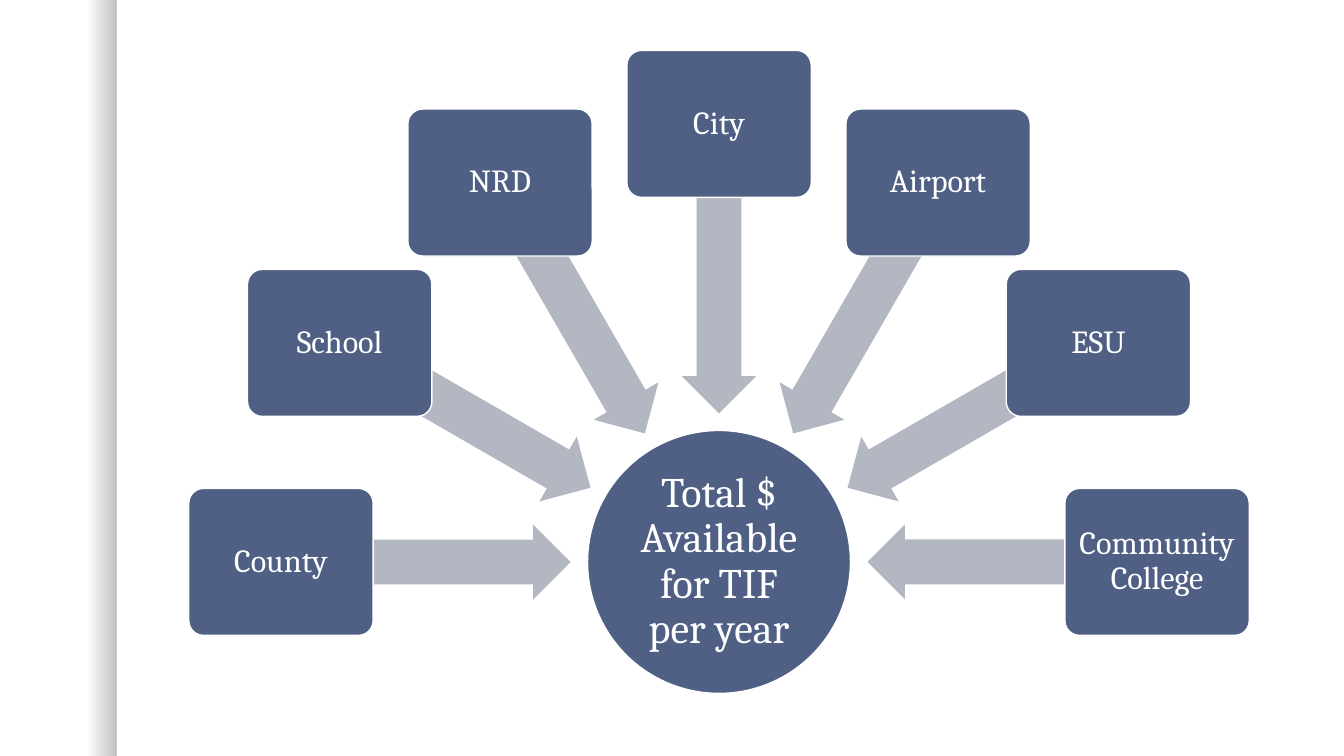
from math import cos, radians, sin

from pptx import Presentation
from pptx.dml.color import RGBColor
from pptx.enum.shapes import MSO_SHAPE as Preset
from pptx.enum.text import MSO_ANCHOR as Anchor, PP_ALIGN as Align
from pptx.oxml.ns import qn
from pptx.util import Inches, Pt
from lxml.etree import SubElement

COLORS = {"node": "506084", "arrow": "B3B7C2", "white": "FFFFFF", "shade": "000000"}
FONT = "Cambria"
COLUMNS, ROWS = 32, 18
HUB = (17.12, 13.38)
BOX_RADIUS, ARROW_RADIUS = 10.43, 6.98
BOX_SIZE, ARROW_SIZE, HUB_SIZE = (4.39, 3.5), (6.89, 1.78), (6.26, 6.26)
SOURCES = ["County", "School", "NRD", "City", "Airport", "ESU", "Community College"]


class Diagram:
    """Draws on one slide; centres and sizes are in grid columns and rows."""

    def __init__(self, presentation):
        self.slide = presentation.slides.add_slide(presentation.slide_layouts[6])
        self.column = presentation.slide_width / COLUMNS
        self.row = presentation.slide_height / ROWS

    def shape(self, preset, centre, size, color=None):
        (x, y), (width, height) = centre, size
        shape = self.slide.shapes.add_shape(
            preset, round((x - width / 2) * self.column), round((y - height / 2) * self.row),
            round(width * self.column), round(height * self.row))
        shape.shadow.inherit = False
        shape.line.fill.background()
        if color:
            shape.fill.solid()
            shape.fill.fore_color.rgb = RGBColor.from_string(COLORS[color])
        return shape

    def edge_shade(self, width):
        """Left band that darkens towards its right edge."""
        shape = self.shape(Preset.RECTANGLE, (width / 2, ROWS / 2), (width, ROWS))
        shape.fill.gradient()
        shape.fill.gradient_angle = 0
        for stop, position, opacity in zip(shape.fill.gradient_stops, (0.75, 1), (0, 25)):
            stop.position = position
            stop.color.rgb = RGBColor.from_string(COLORS["shade"])
        colors = shape._element.spPr.iter(qn("a:srgbClr"))
        for color, opacity in zip(list(colors), (0, 25)):
            SubElement(color, qn("a:alpha")).set("val", str(opacity * 1000))

    def node(self, preset, centre, size, text, points, margin):
        shape = self.shape(preset, centre, size, "node")
        shape.line.color.rgb = RGBColor.from_string(COLORS["white"])
        shape.line.width = Pt(1)
        frame = shape.text_frame
        frame.word_wrap = True
        frame.vertical_anchor = Anchor.MIDDLE
        frame.margin_left = frame.margin_right = Inches(margin)
        frame.margin_top = frame.margin_bottom = Inches(margin)
        paragraph = frame.paragraphs[0]
        paragraph.text = text
        paragraph.alignment = Align.CENTER
        paragraph.line_spacing = 0.9
        paragraph.font.name = FONT
        paragraph.font.size = Pt(points)
        paragraph.font.color.rgb = RGBColor.from_string(COLORS["white"])
        return shape

    def arrow(self, angle):
        shape = self.shape(Preset.LEFT_ARROW, around_hub(angle, ARROW_RADIUS),
                           ARROW_SIZE, "arrow")
        shape.adjustments[0], shape.adjustments[1] = 0.6, 0.5
        shape.rotation = angle % 360

    def source(self, angle, text):
        box = self.node(Preset.ROUNDED_RECTANGLE, around_hub(angle, BOX_RADIUS),
                        BOX_SIZE, text, 23, 0.05)
        box.adjustments[0] = 0.1


def around_hub(angle, radius):
    """Point at a clockwise angle, in degrees, from the hub's right side."""
    return (HUB[0] + radius * cos(radians(angle)), HUB[1] + radius * sin(radians(angle)))


def main():
    presentation = Presentation()
    presentation.slide_width, presentation.slide_height = Inches(13.33), Inches(7.5)
    diagram = Diagram(presentation)
    diagram.edge_shade(2.78)
    diagram.node(Preset.OVAL, HUB, HUB_SIZE, "Total $ Available for TIF per year", 30, 0.02)
    step = 180 / (len(SOURCES) - 1)
    for index, text in enumerate(SOURCES):
        angle = 180 + index * step
        diagram.arrow(angle)
        diagram.source(angle, text)
    presentation.save("out.pptx")


if __name__ == "__main__":
    main()
